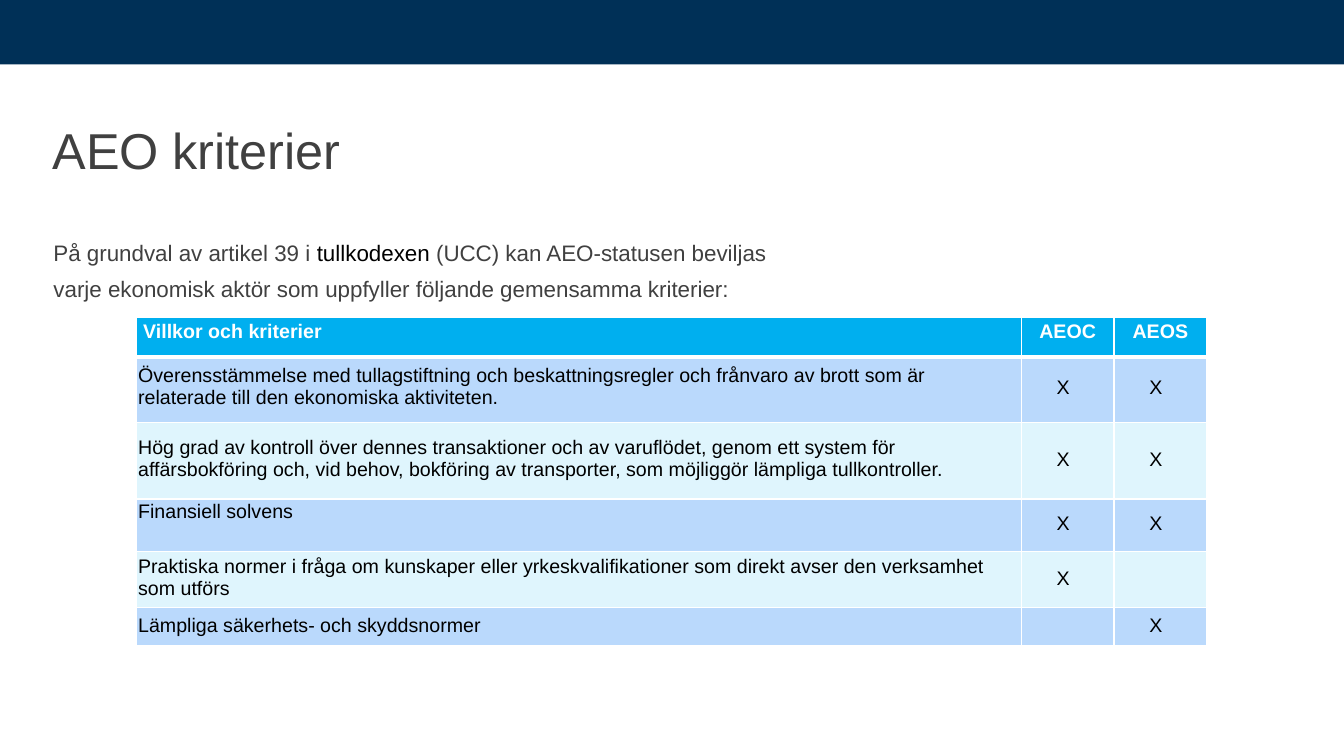
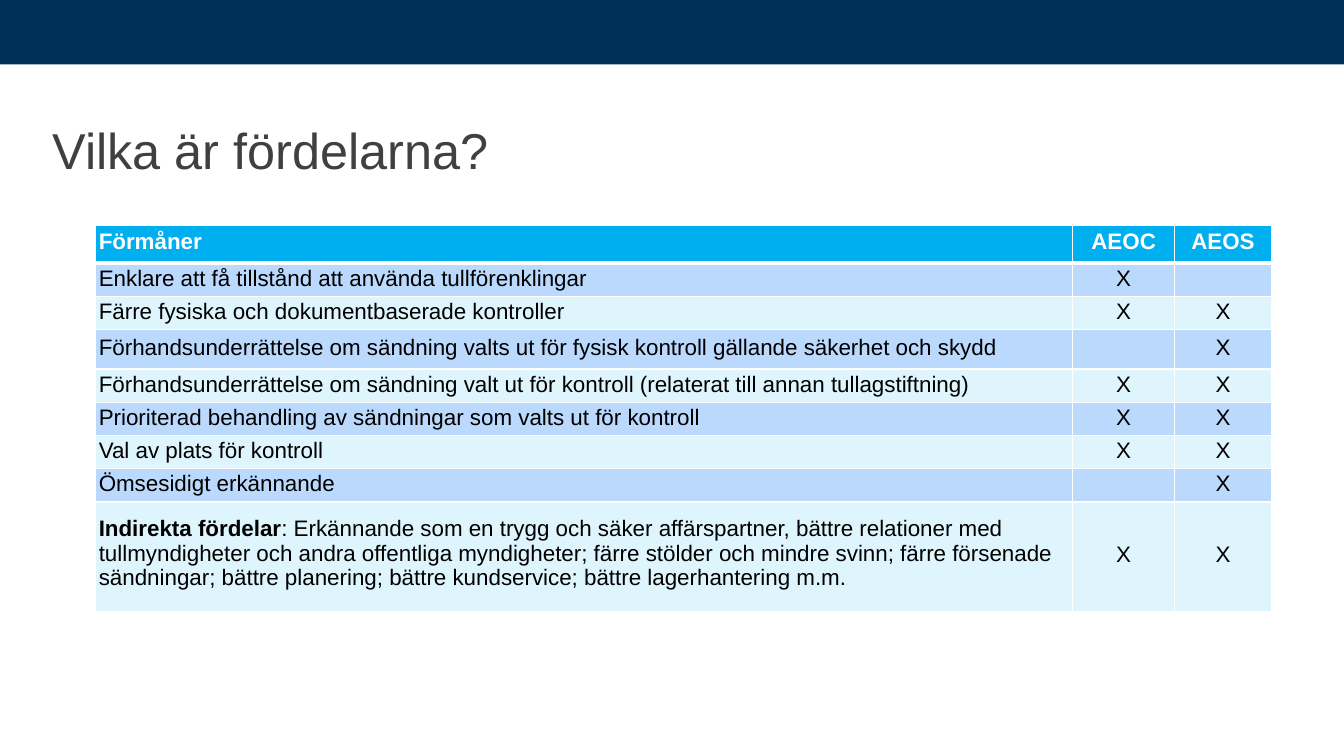
import pptx
import pptx.dml.color
import pptx.enum.shapes
import pptx.enum.text
import pptx.oxml
import pptx.oxml.ns
import pptx.util

Inches = pptx.util.Inches
Pt = pptx.util.Pt
ALIGN = pptx.enum.text.PP_ALIGN
MIDDLE = pptx.enum.text.MSO_ANCHOR.MIDDLE

NAVY, GREY, BLACK, WHITE = "003057", "404040", "000000", "FFFFFF"
HEADER, ROW_FILLS = "00AFEF", ("BAD9FC", "DFF5FD")
SLIDE_W, SLIDE_H = 13.33, 7.5
TITLE_BOX = (0.52, 0.79, 12.28, 1.45)
BOTH = ("X", "X")
FIRST = ("X", "")
SECOND = ("", "X")

CRITERIA_INTRO = [
    ("På grundval av artikel 39 i ", GREY),
    ("tullkodexen ", BLACK),
    ("(UCC) kan AEO-statusen beviljas varje ekonomisk aktör som uppfyller "
     "följande gemensamma kriterier:", GREY),
]
# rows: height, label, marks, label top, mark top
CRITERIA = [
    (0.65, "Överensstämmelse med tullagstiftning och beskattningsregler och frånvaro "
     "av brott som är relaterade till den ekonomiska aktiviteten.", BOTH, 0.08, 0.2),
    (0.76, "Hög grad av kontroll över dennes transaktioner och av varuflödet, genom ett "
     "system för affärsbokföring och, vid behov, bokföring av transporter, som möjliggör "
     "lämpliga tullkontroller.", BOTH, 0.14, 0.26),
    (0.52, "Finansiell solvens", BOTH, 0.02, 0.14),
    (0.56, "Praktiska normer i fråga om kunskaper eller yrkeskvalifikationer som direkt "
     "avser den verksamhet som utförs", FIRST, 0.04, 0.16),
    (0.38, "Lämpliga säkerhets- och skyddsnormer", SECOND, 0.07, 0.07),
]
BENEFITS = [
    (0.33, "Enklare att få tillstånd att använda tullförenklingar", FIRST, 0.03, 0.03),
    (0.33, "Färre fysiska och dokumentbaserade kontroller", BOTH, 0.03, 0.03),
    (0.39, "Förhandsunderrättelse om sändning valts ut för fysisk kontroll gällande "
     "säkerhet och skydd", SECOND, 0.06, 0.06),
    (0.33, "Förhandsunderrättelse om sändning valt ut för kontroll (relaterat till annan "
     "tullagstiftning)", BOTH, 0.03, 0.03),
    (0.33, "Prioriterad behandling av sändningar som valts ut för kontroll", BOTH, 0.03, 0.03),
    (0.33, "Val av plats för kontroll", BOTH, 0.03, 0.03),
    (0.33, "Ömsesidigt erkännande", SECOND, 0.03, 0.03),
    (1.09, [("Indirekta fördelar", BLACK, True),
            (": Erkännande som en trygg och säker affärspartner, bättre relationer med "
             "tullmyndigheter och andra offentliga myndigheter; färre stölder och mindre "
             "svinn; färre försenade sändningar; bättre planering; bättre kundservice; "
             "bättre lagerhantering m.m.", BLACK)], BOTH, 0.14, 0.4),
]


def rgb(value):
    return pptx.dml.color.RGBColor.from_string(value)


def apply(obj, formats):
    for name, value in formats.items():
        setattr(obj, name, value)


def add_runs(p, runs, size):
    for text, color, *bold in runs:
        r = p.add_run()
        r.text = text
        apply(r.font, {"name": "Arial", "size": Pt(size), "bold": bool(bold)})
        r.font.color.rgb = rgb(color)


def add_text(s, box, runs, size, line_spacing, top=0):
    tf = s.shapes.add_textbox(*map(Inches, box)).text_frame
    apply(tf, {"word_wrap": True, "vertical_anchor": MIDDLE, "margin_left": 0,
               "margin_right": 0, "margin_top": Inches(top), "margin_bottom": 0})
    p = tf.paragraphs[0]
    p.line_spacing = line_spacing
    add_runs(p, runs, size)


def add_border(cell, side, width):
    ns = pptx.oxml.ns.nsdecls("a")
    cell._tc.get_or_add_tcPr().append(pptx.oxml.parse_xml(
        f'<a:ln{side} {ns} w="{Pt(width)}"><a:solidFill><a:srgbClr val="{WHITE}"/>'
        f'</a:solidFill></a:ln{side}>'))


def fill_cell(cell, runs, size, fill, margins, align, edges):
    left, top, right = margins
    apply(cell, {"margin_left": Inches(left), "margin_top": Inches(top),
                 "margin_right": Inches(right), "margin_bottom": 0})
    for side, width in zip("LRTB", edges):
        add_border(cell, side, width)
    cell.fill.solid()
    cell.fill.fore_color.rgb = rgb(fill)
    p = cell.text_frame.paragraphs[0]
    p.alignment = align
    add_runs(p, [run for run in runs if run[0]], size)


def add_mark_table(s, at, widths, header, rows, size, indent, mark_right=0):
    title, height, top, title_indent = header
    heights = [height] + [row[0] for row in rows]
    table = s.shapes.add_table(len(heights), len(widths), *map(
        Inches, (*at, sum(widths), sum(heights)))).table
    for column, width in zip(table.columns, widths):
        column.width = Inches(width)
    for row, height in zip(table.rows, heights):
        row.height = Inches(height)
    for c, text in enumerate((title, "AEOC", "AEOS")):
        fill_cell(table.cell(0, c), [(text, WHITE, True)], size, HEADER,
                  (0 if c else title_indent, top, 0),
                  ALIGN.CENTER if c else ALIGN.LEFT, (1, 1, 1, 3))
    for i, (_, label, marks, label_top, mark_top) in enumerate(rows):
        fill = ROW_FILLS[i % 2]
        edges = (1, 1, 1 if i else 3, 1)
        runs = [(label, BLACK)] if isinstance(label, str) else label
        fill_cell(table.cell(i + 1, 0), runs, size, fill, (indent, label_top, 0.04),
                  ALIGN.LEFT, edges)
        for c, mark in enumerate(marks, 1):
            fill_cell(table.cell(i + 1, c), [(mark, BLACK)], size, fill,
                      (0, mark_top, mark_right), ALIGN.CENTER, edges)


def add_base(prs, title):
    s = prs.slides.add_slide(prs.slide_layouts[6])
    band = s.shapes.add_shape(pptx.enum.shapes.MSO_SHAPE.RECTANGLE, 0, 0,
                              prs.slide_width, Inches(0.64))
    band.shadow.inherit = False
    band.fill.solid()
    band.fill.fore_color.rgb = rgb(NAVY)
    band.line.fill.background()
    add_text(s, TITLE_BOX, [(title, GREY)], 36, 0.9)
    return s


def add_criteria_slide(prs):
    s = add_base(prs, "AEO kriterier")
    add_text(s, (0.53, 2, 7.11, 0.98), CRITERIA_INTRO, 16, 1.35, 0.29)
    add_mark_table(s, (1.35, 3.15), (8.78, 0.92, 0.92),
                   ("Villkor och kriterier", 0.39, 0.03, 0.07), CRITERIA, 14, 0.02, 0.09)


def add_benefits_slide(prs):
    s = add_base(prs, "Vilka är fördelarna?")
    add_mark_table(s, (0.95, 2.24), (9.69, 1.01, 0.96),
                   ("Förmåner", 0.37, 0.04, 0.03), BENEFITS, 16, 0.03)


def main():
    prs = pptx.Presentation()
    apply(prs, {"slide_width": Inches(SLIDE_W), "slide_height": Inches(SLIDE_H)})
    add_criteria_slide(prs)
    add_benefits_slide(prs)
    prs.save("out.pptx")


if __name__ == "__main__":
    main()
